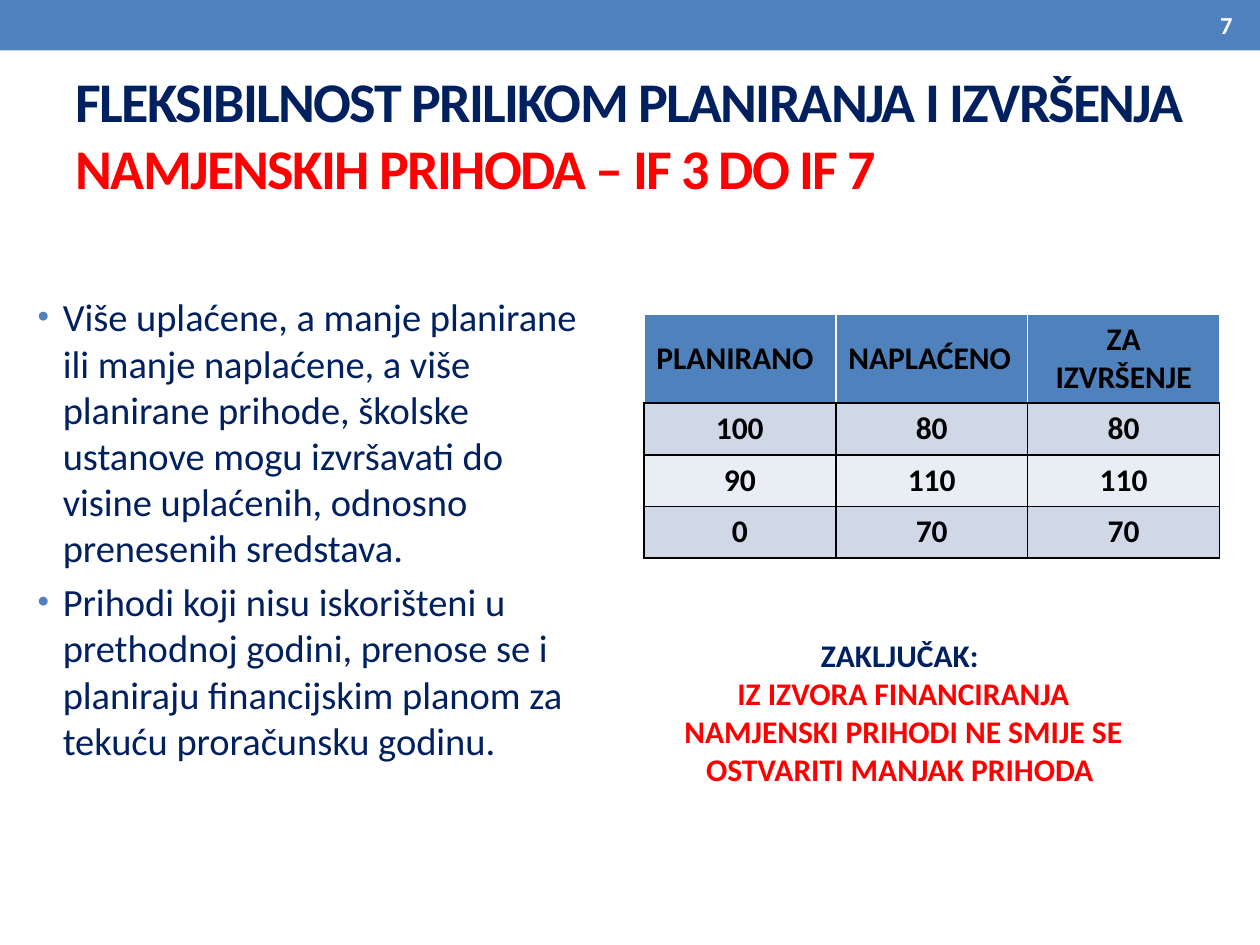
from lxml.etree import SubElement
from pptx import Presentation
from pptx.dml.color import RGBColor
from pptx.enum.shapes import MSO_SHAPE as Shape
from pptx.enum.text import MSO_ANCHOR as Anchor, PP_ALIGN as Align
from pptx.oxml import parse_xml
from pptx.oxml.ns import nsdecls, qn
from pptx.util import Inches, Pt

FONT = "Calibri"
COLORS = {
    "blue": "4F81BD",
    "navy": "002060",
    "red": "FF0000",
    "black": "000000",
    "white": "FFFFFF",
    "band": "D0D8E8",
    "light": "E9EDF4",
}
TITLE = [
    ("FLEKSIBILNOST PRILIKOM PLANIRANJA I IZVRŠENJA ", "navy"),
    ("NAMJENSKIH PRIHODA – IF 3 DO IF 7", "red"),
]
BULLETS = [
    "Više uplaćene, a manje planirane ili manje naplaćene, a više planirane "
    "prihode, školske ustanove mogu izvršavati do visine uplaćenih, odnosno "
    "prenesenih sredstava.",
    "Prihodi koji nisu iskorišteni u prethodnoj godini, prenose se i planiraju "
    "financijskim planom za tekuću proračunsku godinu.",
]
ROWS = [
    ("PLANIRANO", "NAPLAĆENO", "ZA IZVRŠENJE"),
    ("100", "80", "80"),
    ("90", "110", "110"),
    ("0", "70", "70"),
]
CONCLUSION = [
    ("ZAKLJUČAK: ", "navy"),
    ("IZ IZVORA FINANCIRANJA NAMJENSKI PRIHODI NE SMIJE SE OSTVARITI MANJAK PRIHODA ", "red"),
]


def rgb(color):
    return RGBColor.from_string(COLORS[color])


def add_span(para, text, size, color, bold=True):
    span = para.add_run()
    span.text = text
    span.font.name = FONT
    span.font.size = Pt(size)
    span.font.bold = bold
    span.font.color.rgb = rgb(color)
    return span


def add_bar(page):
    bar = page.shapes.add_shape(Shape.RECTANGLE, 0, 0, Inches(10), Inches(0.4))
    bar.shadow.inherit = False
    bar.fill.solid()
    bar.fill.fore_color.rgb = rgb("blue")
    bar.line.fill.background()


def set_title(page):
    title = page.shapes.title
    title.left, title.top = Inches(0.5), Inches(0.58)
    title.width, title.height = Inches(9), Inches(0.96)
    frame = title.text_frame
    frame.word_wrap = True
    frame.vertical_anchor = Anchor.MIDDLE
    para = frame.paragraphs[0]
    para.alignment = Align.LEFT
    for text, color in TITLE:
        span = add_span(para, text, 32, color)
        span.font._element.set("spc", "-100")


def add_paragraphs(page, left, top, width, height, lines, size, align, bold=True):
    box = page.shapes.add_textbox(Inches(left), Inches(top), Inches(width), Inches(height))
    frame = box.text_frame
    frame.word_wrap = True
    for index, (text, color) in enumerate(lines):
        para = frame.add_paragraph() if index else frame.paragraphs[0]
        para.alignment = align
        add_span(para, text, size, color, bold)
    return frame


def add_bullets(page):
    lines = [(text, "navy") for text in BULLETS]
    frame = add_paragraphs(page, 0.2, 2.28, 4.57, 4.71, lines, 22, Align.LEFT, bold=False)
    for index, para in enumerate(frame.paragraphs):
        if index:
            para.space_before = Pt(4.4)
        props = para._p.get_or_add_pPr()
        props.set("marL", str(Inches(0.2)))
        props.set("indent", str(-Inches(0.2)))
        color = SubElement(props, qn("a:buClr"))
        SubElement(color, qn("a:srgbClr"), val=COLORS["blue"])
        SubElement(props, qn("a:buSzPct"), val="85000")
        SubElement(props, qn("a:buFont"), typeface="Arial")
        SubElement(props, qn("a:buChar"), char="•")


def set_borders(cell, sides):
    props = cell._tc.get_or_add_tcPr()
    for index, (side, color) in enumerate(sides.items()):
        line = parse_xml(
            f'<a:ln{side} {nsdecls("a")} w="{Pt(1)}"><a:solidFill>'
            f'<a:srgbClr val="{COLORS[color]}"/></a:solidFill></a:ln{side}>'
        )
        props.insert(index, line)


def add_revenue_table(page):
    frame = page.shapes.add_table(
        len(ROWS), 3, Inches(5.11), Inches(2.49), Inches(4.57), Inches(1.94)
    )
    table = frame.table
    for r, values in enumerate(ROWS):
        header = r == 0
        table.rows[r].height = Inches(0.71 if header else 0.41)
        fill = "blue" if header else ("band" if r % 2 else "light")
        edge = "white" if header else "black"
        top = "white" if header else "black"
        for c, text in enumerate(values):
            cell = table.cell(r, c)
            cell.fill.solid()
            cell.fill.fore_color.rgb = rgb(fill)
            cell.vertical_anchor = Anchor.MIDDLE if header else Anchor.TOP
            set_borders(cell, {"L": edge, "R": edge, "T": top, "B": "black"})
            para = cell.text_frame.paragraphs[0]
            para.alignment = Align.LEFT if header and c < 2 else Align.CENTER
            add_span(para, text, 18, "black")


def main():
    deck = Presentation()
    deck.slide_width, deck.slide_height = Inches(10), Inches(7.5)
    page = deck.slides.add_slide(deck.slide_layouts[5])
    add_bar(page)
    set_title(page)
    add_bullets(page)
    add_revenue_table(page)
    add_paragraphs(page, 5.24, 5, 3.86, 1.31, CONCLUSION, 18, Align.CENTER)
    number = add_paragraphs(page, 9.09, 0.02, 0.79, 0.36, [("7", "white")], 14, Align.RIGHT)
    number.vertical_anchor = Anchor.MIDDLE
    deck.save("out.pptx")


if __name__ == "__main__":
    main()
